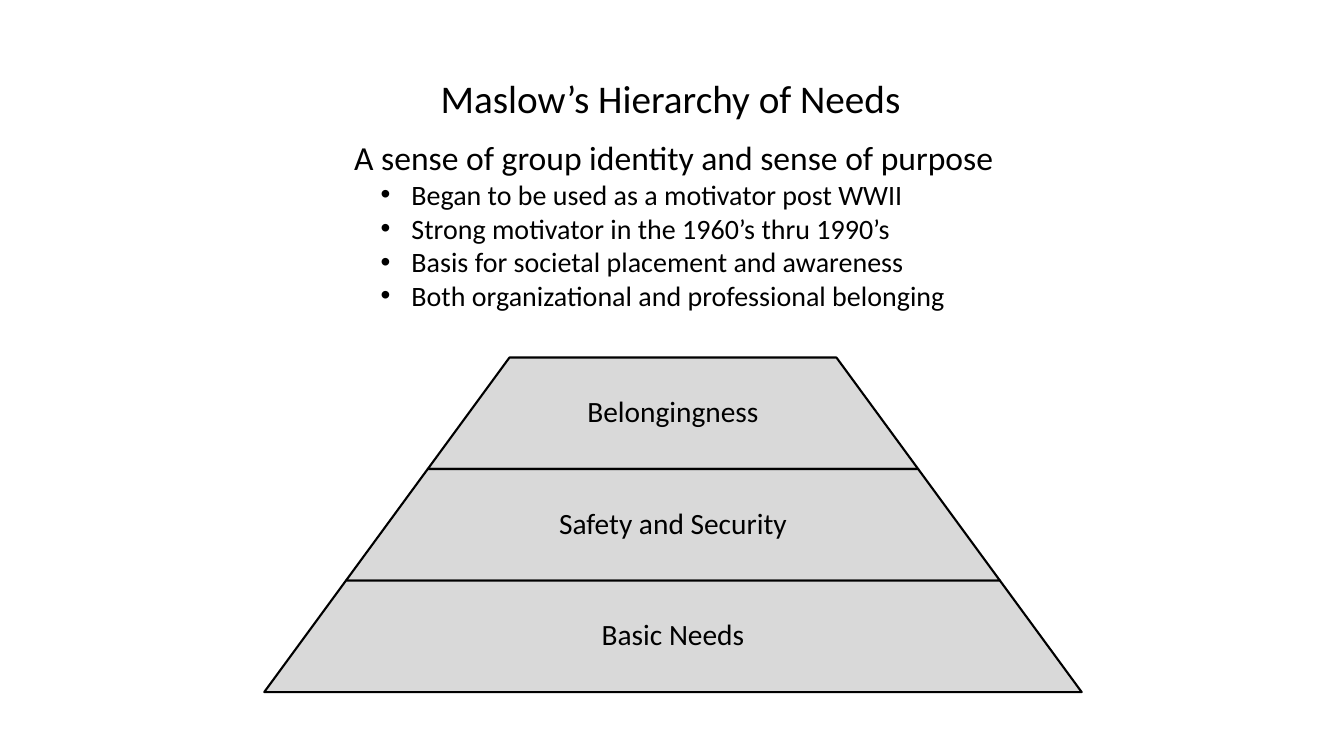
from lxml.etree import SubElement
from pptx import Presentation
from pptx.dml.color import RGBColor
from pptx.enum.text import MSO_ANCHOR, MSO_AUTO_SIZE, PP_ALIGN
from pptx.oxml.ns import qn
from pptx.util import Cm, Pt

BLACK = RGBColor(0x00, 0x00, 0x00)
GREY = RGBColor(0xD9, 0xD9, 0xD9)
FONT = "Calibri"

NEEDS = ["Belongingness", "Safety and Security", "Basic Needs"]
POINTS = [
    "Began to be used as a motivator post WWII",
    "Strong motivator in the 1960’s thru 1990’s",
    "Basis for societal placement and awareness",
    "Both organizational and professional belonging",
]

CENTRE = 16.96
PYRAMID_TOP = 9.01
TIER_HEIGHT = 2.81
TOP_HALF_WIDTH = 4.12
TIER_SLOPE = 2.06


def write(p, text, size, align):
    p.text = text
    p.alignment = align
    for r in p.runs:
        r.font.name = FONT
        r.font.size = Pt(size)
        r.font.color.rgb = BLACK


def add_bullet(p):
    pPr = p._p.get_or_add_pPr()
    pPr.set("marL", str(Cm(3.95)))
    pPr.set("indent", str(Cm(-0.78)))
    SubElement(pPr, qn("a:buFont"), typeface="Arial")
    SubElement(pPr, qn("a:buChar"), char="•")


def set_title(slide, text):
    title = slide.shapes.title
    title.left, title.top = Cm(10.85), Cm(1.75)
    title.width, title.height = Cm(12.22), Cm(1.45)
    tf = title.text_frame
    tf.auto_size = MSO_AUTO_SIZE.NONE
    tf.word_wrap = False
    tf.vertical_anchor = MSO_ANCHOR.TOP
    write(tf.paragraphs[0], text, 28, PP_ALIGN.LEFT)


def add_description(slide, heading, points):
    box = slide.shapes.add_textbox(Cm(6.17), Cm(3.33), Cm(21.62), Cm(4.7))
    tf = box.text_frame
    tf.word_wrap = True
    write(tf.paragraphs[0], heading, 24, PP_ALIGN.CENTER)
    for point in points:
        p = tf.add_paragraph()
        write(p, point, 20, PP_ALIGN.LEFT)
        add_bullet(p)


def add_tier(slide, index, text):
    top = PYRAMID_TOP + index * TIER_HEIGHT
    bottom = top + TIER_HEIGHT
    upper = TOP_HALF_WIDTH + index * TIER_SLOPE
    lower = upper + TIER_SLOPE
    builder = slide.shapes.build_freeform(Cm(CENTRE - lower), Cm(bottom))
    builder.add_line_segments([
        (Cm(CENTRE - upper), Cm(top)),
        (Cm(CENTRE + upper), Cm(top)),
        (Cm(CENTRE + lower), Cm(bottom)),
    ], close=True)
    sp = builder.convert_to_shape()
    sp.shadow.inherit = False
    sp.fill.solid()
    sp.fill.fore_color.rgb = GREY
    sp.line.color.rgb = BLACK
    sp.line.width = Pt(1.5)
    tf = sp.text_frame
    tf.word_wrap = True
    tf.vertical_anchor = MSO_ANCHOR.MIDDLE
    tf.margin_left = tf.margin_right = Cm(TIER_SLOPE)
    tf.margin_top = tf.margin_bottom = Cm(0.07)
    p = tf.paragraphs[0]
    write(p, text, 21, PP_ALIGN.CENTER)
    p.line_spacing = 0.9


def main():
    prs = Presentation()
    prs.slide_width, prs.slide_height = Cm(33.87), Cm(19.05)
    slide = prs.slides.add_slide(prs.slide_layouts[5])
    for index, need in enumerate(NEEDS):
        add_tier(slide, index, need)
    set_title(slide, "Maslow’s Hierarchy of Needs")
    add_description(slide, "A sense of group identity and sense of purpose", POINTS)
    prs.save("out.pptx")


if __name__ == "__main__":
    main()
